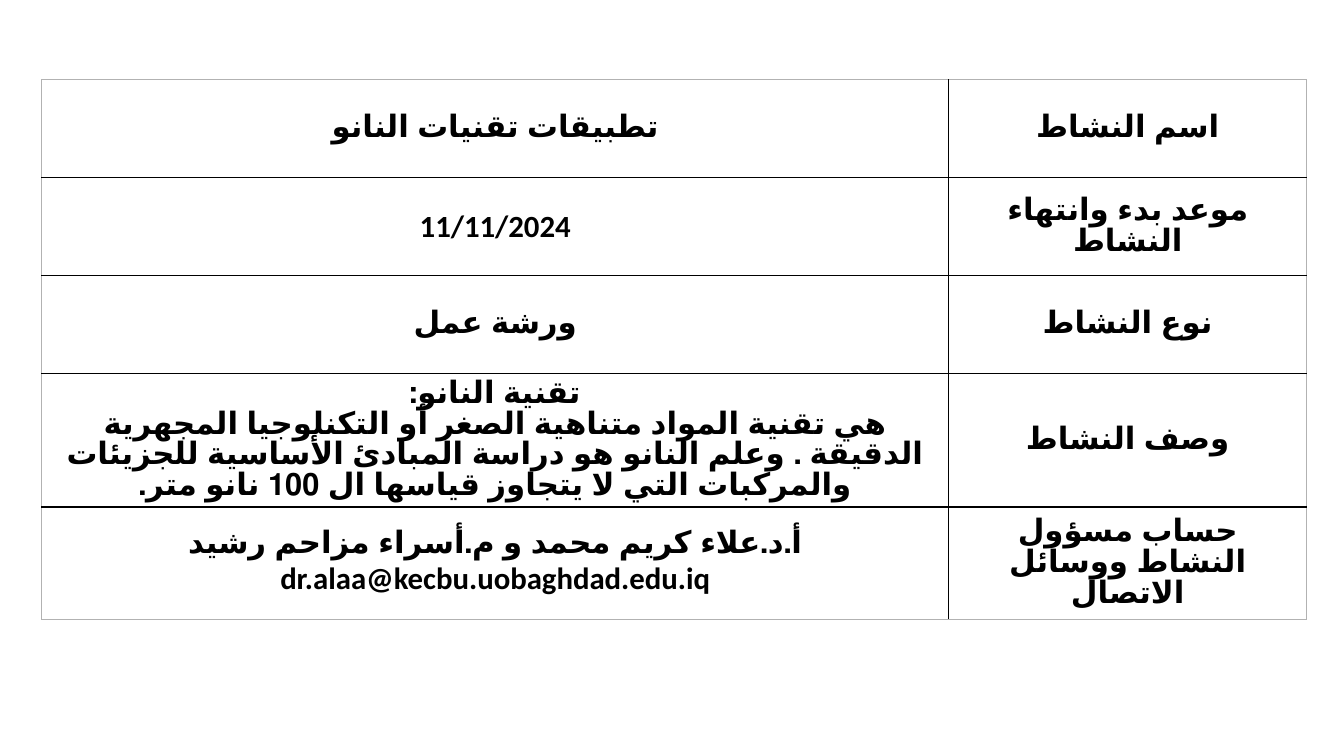
"""Builds a slide with a table that describes a workshop on nanotechnology."""
from lxml.etree import SubElement
from pptx import Presentation
from pptx.dml.color import RGBColor
from pptx.enum.lang import MSO_LANGUAGE_ID as Language
from pptx.enum.text import MSO_ANCHOR as Anchor, PP_ALIGN as Align
from pptx.oxml.ns import qn
from pptx.util import Cm, Pt

ACTIVITY = [
    (["تطبيقات تقنيات النانو"], "اسم النشاط"),
    (["11/11/2024"], "موعد بدء وانتهاء النشاط"),
    (["ورشة عمل"], "نوع النشاط"),
    (["تقنية النانو:",
      "هي تقنية المواد متناهية الصغر أو التكنلوجيا المجهرية الدقيقة . "
      "وعلم النانو هو دراسة المبادئ الأساسية للجزيئات والمركبات "
      "التي لا يتجاوز قياسها ال 100 نانو متر."], "وصف النشاط"),
    (["أ.د.علاء كريم محمد و م.أسراء مزاحم رشيد",
      "dr.alaa@kecbu.uobaghdad.edu.iq"], "حساب مسؤول النشاط ووسائل الاتصال"),
]
LEFT, TOP = 1.05, 2.01
COLUMN_WIDTHS = [22.86, 9.02]
ROW_HEIGHTS = [2.47] * 4 + [2.84]
INK, FRAME = "000000", "B2B2B2"
FONT = {"name": "Calibri", "size": Pt(22), "bold": True,
        "language_id": Language.ARABIC_IRAQ}


def color(hex_code):
    return RGBColor.from_string(hex_code)


def add_borders(cell, row, column):
    outer = {"lnL": column == 0, "lnR": column == len(COLUMN_WIDTHS) - 1,
             "lnT": row == 0, "lnB": row == len(ACTIVITY) - 1}
    properties = cell._tc.get_or_add_tcPr()
    for position, (side, on_frame) in enumerate(outer.items()):
        line = properties.makeelement(qn(f"a:{side}"), {"w": str(Pt(1))})
        fill = SubElement(line, qn("a:solidFill"))
        SubElement(fill, qn("a:srgbClr"), val=FRAME if on_frame else INK)
        properties.insert(position, line)


def fill_cell(cell, lines):
    cell.fill.background()
    cell.vertical_anchor = Anchor.MIDDLE
    cell.text = "\n".join(lines)
    for paragraph in cell.text_frame.paragraphs:
        paragraph.alignment = Align.CENTER
        if len(lines) > 1:
            paragraph._p.get_or_add_pPr().set("rtl", "1")
        font = paragraph.runs[0].font
        for attribute, value in FONT.items():
            setattr(font, attribute, value)
        font.color.rgb = color(INK)


def main():
    deck = Presentation()
    deck.slide_width, deck.slide_height = Cm(33.87), Cm(19.05)
    slide = deck.slides.add_slide(deck.slide_layouts[6])
    table = slide.shapes.add_table(
        len(ACTIVITY), len(COLUMN_WIDTHS), Cm(LEFT), Cm(TOP),
        Cm(sum(COLUMN_WIDTHS)), Cm(sum(ROW_HEIGHTS))).table
    table.first_row = table.horz_banding = False
    for column, width in zip(table.columns, COLUMN_WIDTHS):
        column.width = Cm(width)
    for row_index, (details, label) in enumerate(ACTIVITY):
        table.rows[row_index].height = Cm(ROW_HEIGHTS[row_index])
        for column_index, lines in enumerate((details, [label])):
            cell = table.cell(row_index, column_index)
            fill_cell(cell, lines)
            add_borders(cell, row_index, column_index)
    deck.save("out.pptx")


if __name__ == "__main__":
    main()
